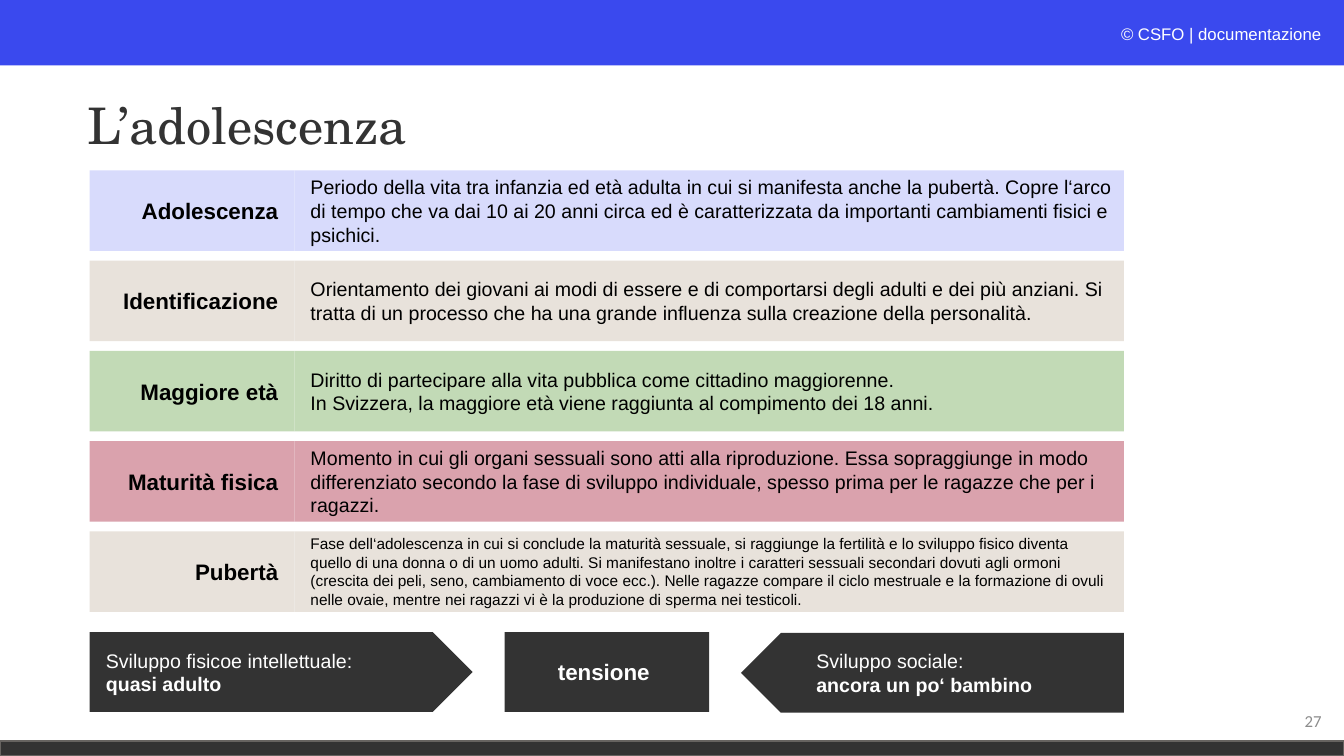
from pptx import Presentation
from pptx.dml.color import RGBColor
from pptx.enum.shapes import MSO_SHAPE as Preset
from pptx.enum.text import MSO_ANCHOR as Anchor, MSO_AUTO_SIZE as AutoSize, PP_ALIGN as Align
from pptx.util import Pt

COLORS = {
    "blue": "3A49EE", "dark": "333333", "edge": "666360", "white": "FFFFFF",
    "black": "000000", "gray": "8C8C8C", "lilac": "D8DBFC", "sand": "E8E2DB",
    "green": "C2DAB6", "rose": "DAA2AD", "pale": "FCFDFE",
}
LEFT, TOP, PITCH, HEIGHT = 64.1, 121.7, 64.45, 57.6
LABEL_WIDTH, TEXT_WIDTH = 146.2, 592.6
ARROW_TOP, ARROW_WIDTH, ARROW_HEIGHT = 451.5, 273.6, 57
LABEL_INSETS, TEXT_INSETS = (7.2, 3.6, 11.5, 3.6), (11.5, 3.6, 7.2, 3.6)

DEFINITIONS = [
    ("Adolescenza", "lilac", 14,
     "Periodo della vita tra infanzia ed età adulta in cui si manifesta anche la pubertà. "
     "Copre l‘arco di tempo che va dai 10 ai 20 anni circa ed è caratterizzata da importanti "
     "cambiamenti fisici e psichici."),
    ("Identificazione", "sand", 14,
     "Orientamento dei giovani ai modi di essere e di comportarsi degli adulti e dei più "
     "anziani. Si tratta di un processo che ha una grande influenza sulla creazione della "
     "personalità."),
    ("Maggiore età", "green", 14,
     "Diritto di partecipare alla vita pubblica come cittadino maggiorenne.\n"
     "In Svizzera, la maggiore età viene raggiunta al compimento dei 18 anni."),
    ("Maturità fisica", "rose", 14,
     "Momento in cui gli organi sessuali sono atti alla riproduzione. Essa sopraggiunge in "
     "modo differenziato secondo la fase di sviluppo individuale, spesso prima per le ragazze "
     "che per i ragazzi."),
    ("Pubertà", "sand", 11,
     "Fase dell‘adolescenza in cui si conclude la maturità sessuale, si raggiunge la fertilità "
     "e lo sviluppo fisico diventa quello di una donna o di un uomo adulti. Si manifestano "
     "inoltre i caratteri sessuali secondari dovuti agli ormoni (crescita dei peli, seno, "
     "cambiamento di voce ecc.). Nelle ragazze compare il ciclo mestruale e la formazione di "
     "ovuli nelle ovaie, mentre nei ragazzi vi è la produzione di sperma nei testicoli."),
]


class SlideBuilder:
    """Draws styled elements on one slide, with lengths in points."""

    def __init__(self, slide, font="Arial"):
        self.slide = slide
        self.font = font

    def color(self, name):
        return RGBColor.from_string(COLORS[name])

    def set_text(self, shape, text, size, color, align=Align.LEFT, bold=False, font=None,
                 insets=(7.2, 3.6, 7.2, 3.6), anchor=Anchor.MIDDLE):
        frame = shape.text_frame
        frame.text = text
        frame.word_wrap = True
        frame.auto_size = AutoSize.NONE
        frame.vertical_anchor = anchor
        (frame.margin_left, frame.margin_top,
         frame.margin_right, frame.margin_bottom) = map(Pt, insets)
        for paragraph in frame.paragraphs:
            paragraph.alignment = align
            for run in paragraph.runs:
                run.font.name = font or self.font
                run.font.size = Pt(size)
                run.font.bold = bold
                run.font.color.rgb = self.color(color)
        return frame

    def title(self, text, box):
        shape = self.slide.shapes.title
        shape.left, shape.top, shape.width, shape.height = map(Pt, box)
        frame = self.set_text(shape, text, 36, "dark", font="TeX Gyre Schola")
        frame.paragraphs[0].line_spacing = 0.9

    def text(self, text, box, size, color, **style):
        shape = self.slide.shapes.add_textbox(*map(Pt, box))
        return self.set_text(shape, text, size, color, **style)

    def block(self, box, fill, line=None, preset=Preset.RECTANGLE):
        shape = self.slide.shapes.add_shape(preset, *map(Pt, box))
        shape.shadow.inherit = False
        shape.fill.solid()
        shape.fill.fore_color.rgb = self.color(fill)
        if line:
            shape.line.color.rgb = self.color(line)
            shape.line.width = Pt(1)
        else:
            shape.line.fill.background()
        return shape

    def arrow(self, text, box, insets, flipped=False):
        shape = self.block(box, "dark", preset=Preset.PENTAGON)
        if flipped:
            shape.element.spPr.xfrm.set("flipH", "1")
        frame = self.set_text(shape, text, 14, "white", insets=insets)
        frame.paragraphs[-1].runs[0].font.bold = True

    def definition(self, top, label, fill, size, text):
        label_shape = self.block((LEFT, top, LABEL_WIDTH, HEIGHT), fill)
        self.set_text(label_shape, label, 16, "black", Align.RIGHT, True, insets=LABEL_INSETS)
        text_shape = self.block((LEFT + LABEL_WIDTH, top, TEXT_WIDTH, HEIGHT), fill)
        self.set_text(text_shape, text, size, "black", insets=TEXT_INSETS)


def main():
    presentation = Presentation()
    presentation.slide_width, presentation.slide_height = Pt(960), Pt(540)
    slide = presentation.slides.add_slide(presentation.slide_layouts[5])
    builder = SlideBuilder(slide)

    builder.block((0, 0, 960, 46.8), "blue")
    builder.block((0, 529.2, 960, 10.8), "dark", line="edge")
    credit = builder.text("", (620.6, 13.7, 330.5, 21.6), 12, "white",
                          align=Align.RIGHT, anchor=Anchor.TOP)
    for part, color, italic in (("© ", "pale", True), ("CSFO | documentazione", "white", False)):
        run = credit.paragraphs[0].add_run()
        run.text = part
        run.font.name, run.font.size, run.font.italic = builder.font, Pt(12), italic
        run.font.color.rgb = builder.color(color)
    builder.text("27", (735.1, 500.4, 216, 28.8), 12, "gray", align=Align.RIGHT, font="Calibri")
    builder.title("L’adolescenza", (55.4, 39.6, 635, 104.4))

    for row, definition in enumerate(DEFINITIONS):
        builder.definition(TOP + row * PITCH, *definition)

    right = LEFT + LABEL_WIDTH + TEXT_WIDTH
    builder.arrow("Sviluppo fisicoe intellettuale:\nquasi adulto",
                  (LEFT, ARROW_TOP, ARROW_WIDTH, ARROW_HEIGHT), TEXT_INSETS)
    tension = builder.block(((LEFT + right - LABEL_WIDTH) / 2, ARROW_TOP, LABEL_WIDTH,
                             ARROW_HEIGHT), "dark")
    builder.set_text(tension, "tensione", 16, "white", Align.CENTER, True, insets=LABEL_INSETS)
    builder.arrow("Sviluppo sociale:\nancora un po‘ bambino",
                  (right - ARROW_WIDTH, ARROW_TOP + 0.6, ARROW_WIDTH, ARROW_HEIGHT),
                  (39.6, 3.6, 7.2, 3.6), flipped=True)

    presentation.save("out.pptx")


if __name__ == "__main__":
    main()
